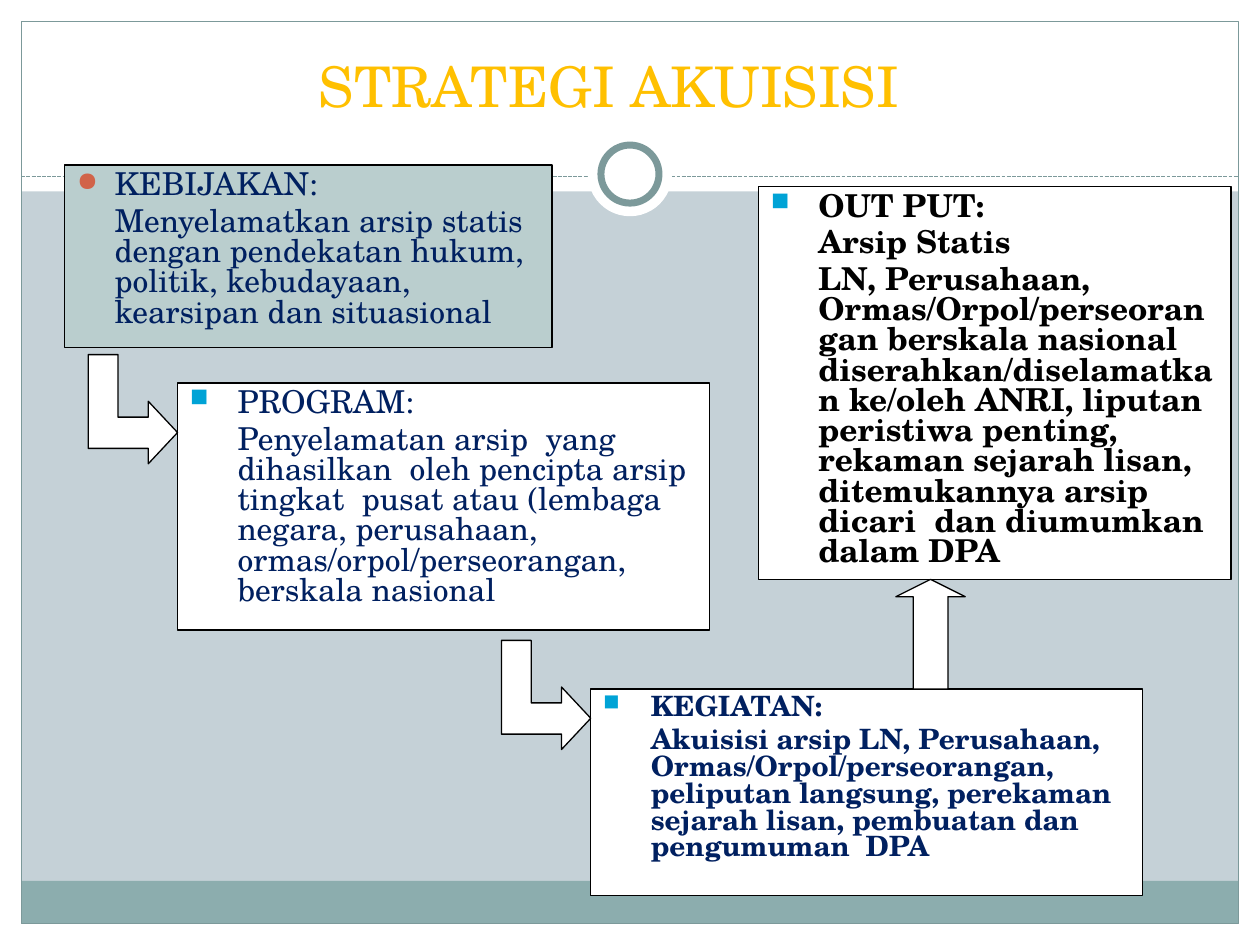
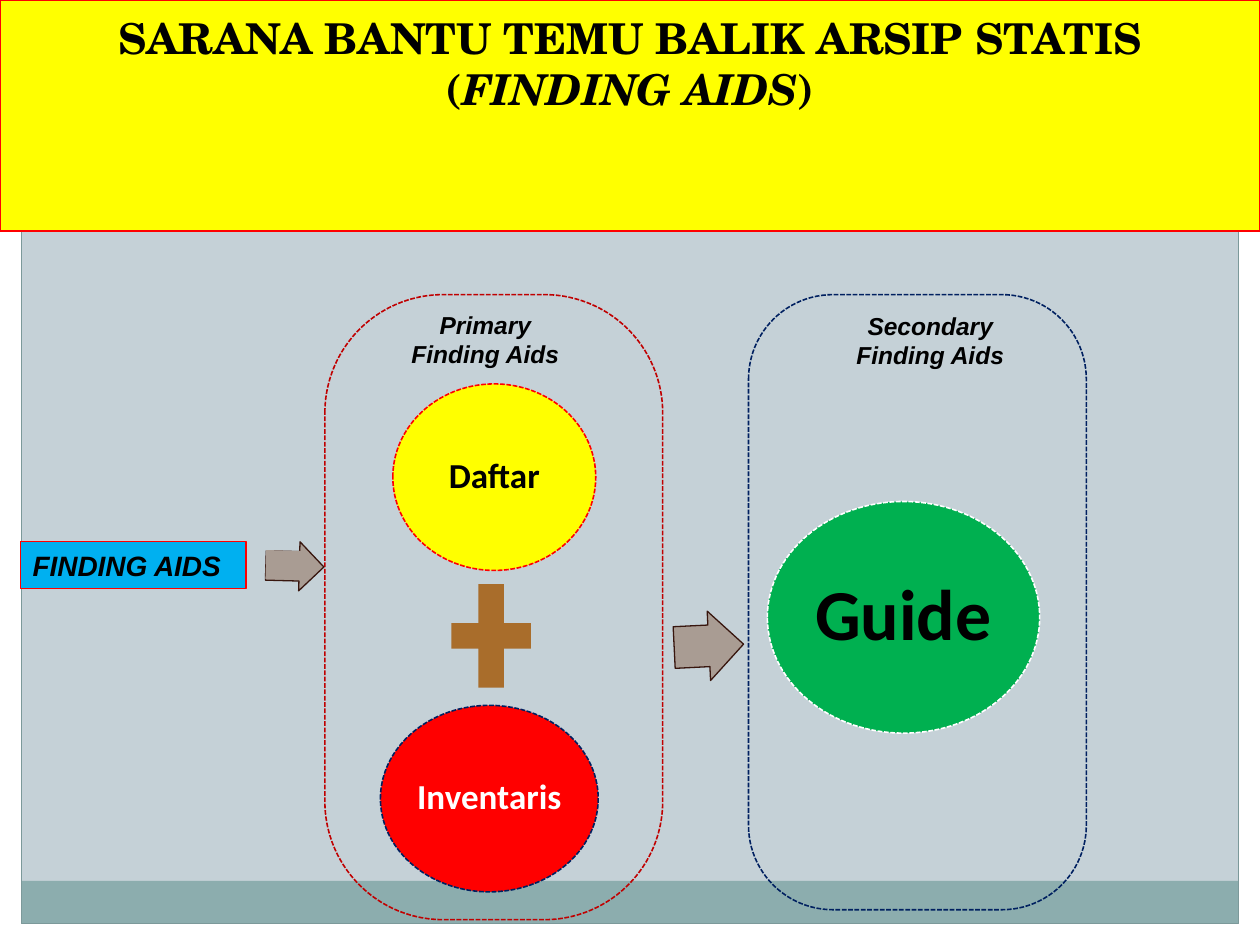
import pptx
import pptx.util
import pptx.dml.color
import pptx.enum.dml
import pptx.enum.shapes
import pptx.enum.text
import pptx.oxml
import pptx.oxml.ns

Cm, Pt = pptx.util.Cm, pptx.util.Pt
SHAPE = pptx.enum.shapes.MSO_SHAPE
ALIGN = pptx.enum.text.PP_ALIGN
ANCHOR = pptx.enum.text.MSO_ANCHOR
DASH = pptx.enum.dml.MSO_LINE.SQUARE_DOT


class Theme:
    # Colours
    back, white, black = "C5D1D7", "FFFFFF", "000000"
    frame, footer = "7C999A", "8CADAE"
    gold, navy, sage = "FFC000", "002060", "BACECE"
    coral, cyan, sky = "D16349", "00A3D6", "00B0F0"
    yellow, red, dark_red = "FFFF00", "FF0000", "C00000"
    green, brown, taupe, umber = "00B050", "A96D2B", "A99C93", "38160E"
    # Fonts
    serif, sans, round_sans = "TeX Gyre Schola", "Arial", "Calibri"
    # Type sizes and line widths in points
    title, band_title, body, small_body = 32, 24.3, 18, 16
    label, tag, circle, big_circle = 14, 16, 20, 41
    thin, dashed, ring = 0.75, 0.9, 4


SLIDE_W, SLIDE_H, MARGIN = 25.4, 19.05, 0.43
HEADER_H, FOOTER_H = 3.86, 0.86


def rgb(color):
    return pptx.dml.color.RGBColor.from_string(color)


def set_line(line, color, width=Theme.thin, dash=None):
    line.color.rgb = rgb(color)
    line.width = Pt(width)
    if dash:
        line.dash_style = dash


def style(sp, fill=None, line=None, width=Theme.thin, dash=None):
    sp.shadow.inherit = False
    if fill:
        sp.fill.solid()
        sp.fill.fore_color.rgb = rgb(fill)
    else:
        sp.fill.background()
    if line:
        set_line(sp.line, line, width, dash)
    else:
        sp.line.fill.background()
    return sp


def add_shape(s, kind, box, adj=(), rotation=0, **look):
    sp = s.shapes.add_shape(kind, *map(Cm, box))
    for i, value in enumerate(adj):
        sp.adjustments[i] = value
    sp.rotation = rotation
    return style(sp, **look)


def inside(box, dx, dy, w, h):
    """A box of size w by h, offset from the corner of another box."""
    return box[0] + dx, box[1] + dy, w, h


def frame_text(sp, anchor, margins=(0.25, 0.13)):
    tf = sp.text_frame
    tf.word_wrap = True
    tf.vertical_anchor = anchor
    tf.margin_left = tf.margin_right = Cm(margins[0])
    tf.margin_top = tf.margin_bottom = Cm(margins[1])
    return tf


def add_text(tf, text, size, font=Theme.serif, color=Theme.black, bold=False,
             italic=False, align=ALIGN.LEFT, spacing=None, before=0, same_line=False):
    """Write a run, in a new paragraph unless same_line is set."""
    p = tf.paragraphs[-1]
    if p.runs and not same_line:
        p = tf.add_paragraph()
    p.alignment = align
    if spacing:
        p.line_spacing = spacing
    if before:
        p.space_before = Pt(before)
    r = p.add_run()
    r.text = text
    r.font.size, r.font.name = Pt(size), font
    r.font.bold, r.font.italic = bold, italic
    r.font.color.rgb = rgb(color)
    return p


def indent(p, depth, bullet=None, color=None, percent=100):
    ppr = p._p.get_or_add_pPr()
    ppr.set("marL", str(Cm(depth)))
    ppr.set("indent", str(-Cm(depth) if bullet else 0))
    if not bullet:
        return
    ns = pptx.oxml.ns.nsdecls("a")
    for xml in (f'<a:buClr {ns}><a:srgbClr val="{color}"/></a:buClr>',
                f'<a:buSzPct {ns} val="{percent * 1000}"/>',
                f'<a:buChar {ns} char="{bullet}"/>'):
        ppr.append(pptx.oxml.parse_xml(xml))


# Shared frame: white margins, footer band, outline
def add_slide(prs):
    s = prs.slides.add_slide(prs.slide_layouts[6])
    s.background.fill.solid()
    s.background.fill.fore_color.rgb = rgb(Theme.back)
    for box in ((0, SLIDE_H - MARGIN, SLIDE_W, MARGIN), (0, 0, SLIDE_W, HEADER_H),
                (0, 0, MARGIN, SLIDE_H), (SLIDE_W - MARGIN, 0, MARGIN, SLIDE_H)):
        add_shape(s, SHAPE.RECTANGLE, box, fill=Theme.white)
    inner_w = SLIDE_W - 2 * MARGIN
    add_shape(s, SHAPE.RECTANGLE, (MARGIN, SLIDE_H - MARGIN - FOOTER_H, inner_w, FOOTER_H),
              fill=Theme.footer)
    add_shape(s, SHAPE.RECTANGLE, (MARGIN, MARGIN, inner_w, SLIDE_H - 2 * MARGIN),
              line=Theme.frame)
    return s


# Header rule with the ring at its centre
def add_header_rule(s, y, ring_y):
    c = s.shapes.add_connector(pptx.enum.shapes.MSO_CONNECTOR.STRAIGHT,
                               Cm(MARGIN), Cm(y), Cm(SLIDE_W - MARGIN), Cm(y))
    set_line(c.line, Theme.frame, dash=DASH)
    c._element.spPr.append(
        pptx.oxml.parse_xml(f'<a:effectLst {pptx.oxml.ns.nsdecls("a")}/>'))
    for d, look in ((1.7, {}), (1.17, dict(line=Theme.frame, width=Theme.ring))):
        add_shape(s, SHAPE.OVAL, ((SLIDE_W - d) / 2, ring_y - d / 2, d, d),
                  fill=Theme.white, **look)


# Stage box: bulleted heading over indented paragraphs
def add_stage(s, box, heading, paragraphs, fill=Theme.white, depth=0.96,
              bullet=("■", Theme.cyan, 80), size=Theme.body, **fmt):
    sp = add_shape(s, SHAPE.RECTANGLE, box, fill=fill, line=Theme.black)
    tf = frame_text(sp, ANCHOR.TOP)
    for i, text in enumerate([heading, *paragraphs]):
        p = add_text(tf, text, size, spacing=0.8, before=0.2 * size, **fmt)
        indent(p, depth, *(() if i else bullet))


# Bent arrow whose tip touches the left side of a box
def add_bent_arrow(s, box, tip_drop):
    w, tip_y, neck, shaft = 1.8, 1.57, 1.21, 0.6
    outline = [(w, tip_y), (neck, tip_y - 0.63), (neck, tip_y - 0.31),
               (shaft, tip_y - 0.31), (shaft, 0), (0, 0), (0, tip_y + 0.32),
               (neck, tip_y + 0.32), (neck, tip_y + 0.63)]
    left, top = box[0] - w, box[1] + tip_drop - tip_y
    points = [(Cm(left + x), Cm(top + y)) for x, y in outline]
    fb = s.shapes.build_freeform(*points[0])
    fb.add_line_segments(points[1:], close=True)
    style(fb.convert_to_shape(), fill=Theme.white, line=Theme.black)


def strategy_slide(prs):
    s = add_slide(prs)
    add_header_rule(s, 3.56, 3.51)
    title = s.shapes.add_textbox(*map(Cm, (4.75, 0.79, 15.06, 1.73)))
    add_text(frame_text(title, ANCHOR.BOTTOM), "STRATEGI AKUISISI", Theme.title,
             color=Theme.gold, align=ALIGN.CENTER)

    policy = (1.3, 3.33, 9.83, 3.68)
    program = (3.58, 7.72, 10.72, 4.98)
    activity = (11.91, 13.89, 11.13, 4.17)
    output = (15.29, 3.76, 9.53, 7.92)
    add_stage(s, policy, "KEBIJAKAN:",
              ["Menyelamatkan arsip statis dengan pendekatan hukum, politik, "
               "kebudayaan, kearsipan dan situasional"],
              fill=Theme.sage, depth=0.76, bullet=("●", Theme.coral, 85), color=Theme.navy)
    add_stage(s, program, "PROGRAM:",
              ["Penyelamatan arsip  yang dihasilkan  oleh pencipta arsip tingkat  pusat "
               "atau (lembaga negara, perusahaan, ormas/orpol/perseorangan, "
               "berskala nasional"], color=Theme.navy)
    add_stage(s, activity, "KEGIATAN:",
              ["Akuisisi arsip LN, Perusahaan, Ormas/Orpol/perseorangan, peliputan "
               "langsung, perekaman sejarah lisan, pembuatan dan pengumuman  DPA"],
              size=Theme.small_body, color=Theme.navy, bold=True)
    add_stage(s, output, "OUT PUT:",
              ["Arsip Statis",
               "LN, Perusahaan, Ormas/Orpol/perseorangan berskala nasional "
               "diserahkan/diselamatkan ke/oleh ANRI, liputan peristiwa penting, "
               "rekaman sejarah lisan, ditemukannya arsip dicari  dan diumumkan "
               "dalam DPA"], bold=True)

    # Arrows from stage to stage
    add_bent_arrow(s, program, 1.0)
    add_bent_arrow(s, activity, 0.59)
    output_bottom = output[1] + output[3]
    add_shape(s, SHAPE.UP_ARROW, (18.06, output_bottom, 1.4, activity[1] - output_bottom),
              adj=(0.5, 0.25), fill=Theme.white, line=Theme.black)


# Yellow title band
def add_title_band(s, box):
    sp = add_shape(s, SHAPE.RECTANGLE, box, fill=Theme.yellow, line=Theme.red)
    tf = frame_text(sp, ANCHOR.TOP, (0.25, 0.25))
    fmt = dict(size=Theme.band_title, bold=True, align=ALIGN.CENTER)
    add_text(tf, "SARANA BANTU TEMU BALIK ARSIP STATIS", **fmt)
    add_text(tf, "(", **fmt)
    add_text(tf, "FINDING AIDS", italic=True, same_line=True, **fmt)
    add_text(tf, ")", same_line=True, **fmt)


# Dashed panel with its caption
def add_panel(s, box, caption, caption_at, corner, line):
    add_shape(s, SHAPE.ROUNDED_RECTANGLE, box, adj=(corner,), line=line,
              width=Theme.dashed, dash=DASH)
    tb = s.shapes.add_textbox(*map(Cm, inside(box, *caption_at, 4.19, 1.45)))
    add_text(frame_text(tb, ANCHOR.TOP), caption, Theme.label, font=Theme.sans,
             bold=True, italic=True, align=ALIGN.CENTER)


def add_circle(s, box, text, fill, line, size=Theme.circle, color=Theme.black):
    sp = add_shape(s, SHAPE.OVAL, box, fill=fill, line=line, width=Theme.dashed, dash=DASH)
    add_text(frame_text(sp, ANCHOR.MIDDLE, (0.08, 0.08)), text, size,
             font=Theme.round_sans, color=color, bold=True, align=ALIGN.CENTER, spacing=0.9)


def add_flow_arrow(s, box, rotation):
    add_shape(s, SHAPE.RIGHT_ARROW, box, adj=(0.6, 0.5), rotation=rotation,
              fill=Theme.taupe, line=Theme.umber)


def finding_aids_slide(prs):
    s = add_slide(prs)
    add_title_band(s, (0, 0, SLIDE_W, 4.66))

    # Primary aids
    primary = (6.55, 5.94, 6.81, 12.6)
    add_circle(s, inside(primary, 1.37, 1.8, 4.09, 3.76), "Daftar", Theme.yellow, Theme.red)
    add_shape(s, SHAPE.MATH_PLUS, inside(primary, 2.26, 5.46, 2.18, 2.84), fill=Theme.brown)
    add_circle(s, inside(primary, 1.12, 8.28, 4.39, 3.76), "Inventaris",
               Theme.red, Theme.navy, color=Theme.white)
    add_panel(s, primary, "Primary Finding Aids", (1.14, 0.18), 0.35, Theme.dark_red)

    # Secondary aids
    secondary = (15.09, 5.94, 6.81, 12.4)
    add_circle(s, inside(secondary, 0.38, 4.17, 5.49, 4.67), "Guide",
               Theme.green, Theme.white, size=Theme.big_circle)
    add_panel(s, secondary, "Secondary Finding Aids", (1.57, 0.2), 0.25, Theme.navy)

    # Starting tag and flow arrows
    tag = add_shape(s, SHAPE.RECTANGLE, (0.41, 10.92, 4.55, 0.94),
                    fill=Theme.sky, line=Theme.red)
    add_text(frame_text(tag, ANCHOR.TOP), "FINDING AIDS", Theme.tag,
             font=Theme.sans, bold=True, italic=True)
    entry = (5.36, 10.92, 1.17, 0.99)
    add_flow_arrow(s, entry, 1.6)
    add_shape(s, SHAPE.RECTANGLE, inside(entry, 0, 0.18, 0.81, 0.58), rotation=1.6,
              fill=Theme.taupe)
    add_flow_arrow(s, (13.59, 12.32, 1.4, 1.4), 357.2)


def main():
    prs = pptx.Presentation()
    prs.slide_width, prs.slide_height = Cm(SLIDE_W), Cm(SLIDE_H)
    strategy_slide(prs)
    finding_aids_slide(prs)
    prs.save("out.pptx")


if __name__ == "__main__":
    main()
